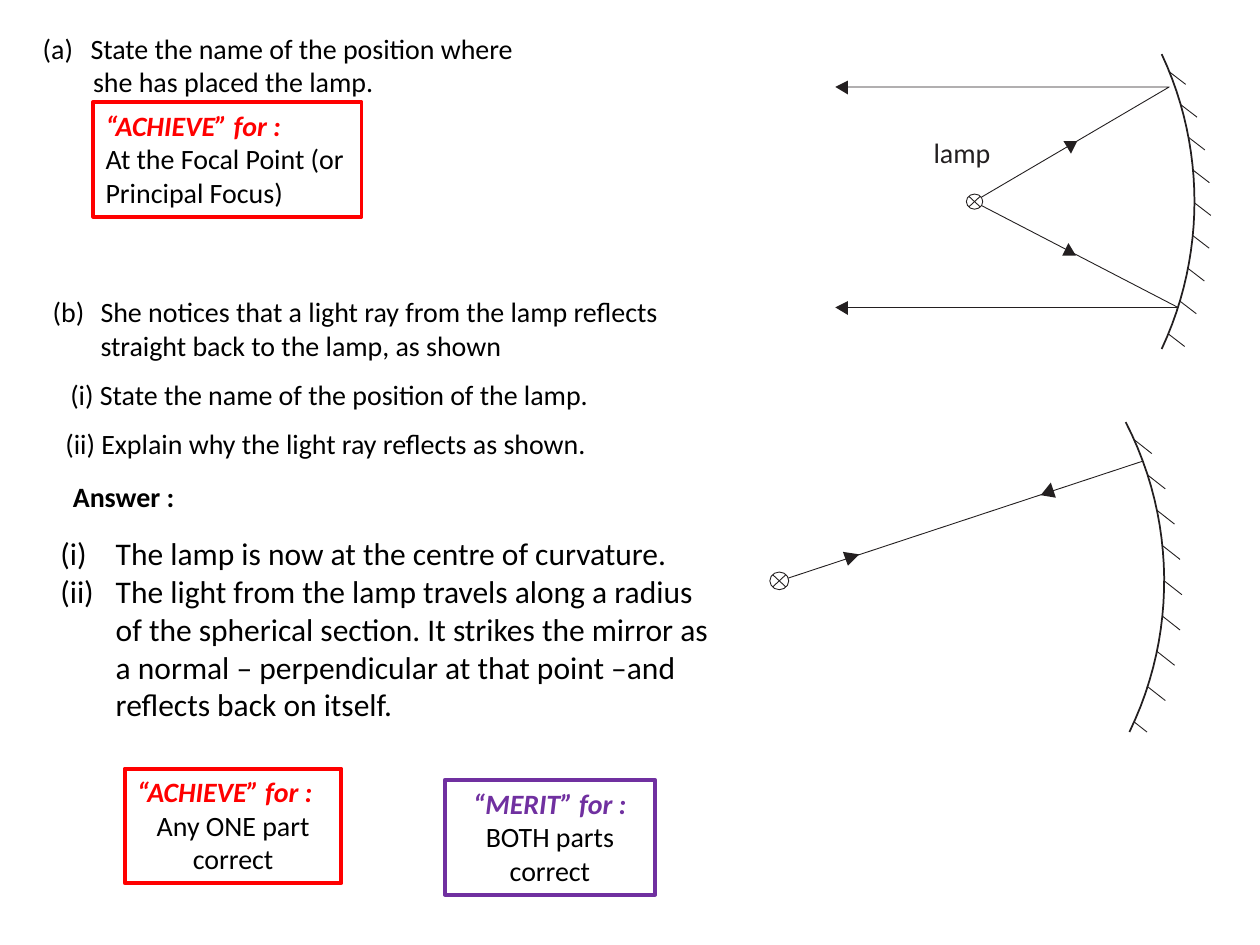
import pptx
import pptx.dml.color
import pptx.enum.shapes
import pptx.enum.text
import pptx.oxml
import pptx.oxml.ns
import pptx.util

Inches, Pt = pptx.util.Inches, pptx.util.Pt
SHAPE = pptx.enum.shapes.MSO_SHAPE
ALIGN = pptx.enum.text.PP_ALIGN
COLORS = {"ink": "231F20", "black": "000000", "white": "FFFFFF",
          "red": "FF0000", "purple": "7030A0"}

# Paragraph: text, then optional indent (left, first), number (style, start)
TEXTS = [
    {"at": (0.24, 0.2, 4.21, 0.64), "paras": [
        {"text": "State the name of the position where",
         "indent": (0.38, -0.38), "number": ("alphaLcParenBoth", 1)},
        {"text": "she has placed the lamp.", "indent": (0.4, 0)}]},
    {"at": (0.32, 2.29, 5.53, 0.64), "paras": [
        {"text": "She notices that a light ray from the lamp reflects "
                 "straight back to the lamp, as shown",
         "indent": (0.38, -0.38), "number": ("alphaLcParenBoth", 2)}]},
    {"at": (0.46, 2.95, 5, 0.37), "paras": [
        {"text": "(i) State the name of the position of the lamp."}]},
    {"at": (-0.08, 3.34, 5.11, 0.37), "paras": [
        {"text": "(ii) Explain why the light ray reflects as shown.",
         "indent": (0.5, 0)}]},
    {"at": (0.48, 3.76, 1.02, 0.37), "wrap": False, "paras": [
        {"text": "Answer :", "bold": True}]},
    {"at": (0.38, 4.19, 5.42, 1.62), "size": 18, "paras": [
        {"text": text, "indent": (0.44, -0.44),
         "number": ("romanLcParenBoth", 1)}
        for text in (
            "The lamp is now at the centre of curvature.",
            "The light from the lamp travels along a radius of the spherical "
            "section. It strikes the mirror as a normal – perpendicular at "
            "that point –and reflects back on itself.")]},
]

# Place, colour, fill, head, head alignment, body, body alignment
GRADES = [
    ((0.74, 0.81, 2.13, 0.91), "red", "white", "“ACHIEVE” for :", ALIGN.LEFT,
     "At the Focal Point (or Principal Focus)", ALIGN.LEFT),
    ((0.99, 6.1, 1.72, 0.91), "red", "white", "“ACHIEVE” for :", ALIGN.LEFT,
     "Any ONE part correct", ALIGN.CENTER),
    ((3.53, 6.19, 1.67, 0.91), "purple", None, "“MERIT” for :", ALIGN.CENTER,
     "BOTH parts correct", ALIGN.CENTER),
]

# Mirror: vertex, radius, top and bottom; ticks: first y, step, size
DIAGRAMS = [
    {"ray": [(6.71, 0.69), (9.28, 0.69), (7.73, 1.6), (9.35, 2.44), (6.71, 2.44)],
     "heads": [[(6.73, 0.64), (6.63, 0.69), (6.73, 0.75)],
               [(6.73, 2.39), (6.63, 2.44), (6.73, 2.5)],
               [(8.44, 1.12), (8.5, 1.22), (8.55, 1.12)],
               [(8.48, 1.93), (8.43, 2.03), (8.54, 2.03)]],
     "lamp": (7.67, 1.54, 0.13, 0.12),
     "mirror": (9.48, 1.6, 2.76, 0.43, 2.77),
     "ticks": (0.57, 0.26, 0.13, 0.1)},
    {"ray": [(9.07, 3.66), (6.19, 4.61)],
     "heads": [[(6.69, 4.38), (6.73, 4.49), (6.82, 4.4)],
               [(8.34, 3.83), (8.26, 3.93), (8.38, 3.95)]],
     "lamp": (6.11, 4.54, 0.15, 0.14),
     "mirror": (9.24, 4.61, 2.75, 3.35, 5.81),
     "ticks": (3.49, 0.28, 0.14, 0.11)},
]
TICKS = 9
ARC_STEPS = 24


def color(name):
    return pptx.dml.color.RGBColor.from_string(COLORS[name])


def paint(shape, fill=None, line=None, width=0.5):
    shape.shadow.inherit = False
    if fill:
        shape.fill.solid()
        shape.fill.fore_color.rgb = color(fill)
    else:
        shape.fill.background()
    if line:
        shape.line.color.rgb = color(line)
        shape.line.width = Pt(width)
    else:
        shape.line.fill.background()


def style(para, tint="black", size=16, bold=False, italic=False):
    for run in para.runs:
        font = run.font
        font.name, font.size = "Calibri", Pt(size)
        font.bold, font.italic = bold, italic
        font.color.rgb = color(tint)


def indent(para, left, first, number=None):
    props = para._p.get_or_add_pPr()
    props.set("marL", str(Inches(left)))
    props.set("indent", str(Inches(first)))
    if number:
        mark = pptx.oxml.parse_xml(
            f'<a:buAutoNum {pptx.oxml.ns.nsdecls("a")} type="{number[0]}"/>')
        if number[1] > 1:
            mark.set("startAt", str(number[1]))
        props.append(mark)


def fit(frame, wrap=True):
    frame.word_wrap = wrap
    frame.auto_size = pptx.enum.text.MSO_AUTO_SIZE.SHAPE_TO_FIT_TEXT
    frame.vertical_anchor = pptx.enum.text.MSO_ANCHOR.TOP


def add_text(shapes, item):
    frame = shapes.add_textbox(*map(Inches, item["at"])).text_frame
    fit(frame, item.get("wrap", True))
    frame.text = "\n".join(part["text"] for part in item["paras"])
    for para, part in zip(frame.paragraphs, item["paras"]):
        if "indent" in part:
            indent(para, *part["indent"], part.get("number"))
        style(para, size=item.get("size", 16), bold=part.get("bold", False))


def add_grade(shapes, at, tint, fill, head, head_align, body, body_align):
    box = shapes.add_shape(SHAPE.RECTANGLE, *map(Inches, at))
    paint(box, fill, tint, 2.25)
    fit(box.text_frame)
    box.text_frame.text = f"{head}\n{body}"
    first, last = box.text_frame.paragraphs
    first.alignment, last.alignment = head_align, body_align
    style(first, tint, bold=True, italic=True)
    style(last)


def add_path(shapes, points, close=False):
    points = [tuple(map(Inches, point)) for point in points]
    pen = shapes.build_freeform(*points[0])
    pen.add_line_segments(points[1:], close=close)
    return pen.convert_to_shape()


def add_line(shapes, start, end):
    line = shapes.add_connector(pptx.enum.shapes.MSO_CONNECTOR.STRAIGHT,
                                *map(Inches, start + end))
    line.line.color.rgb = color("ink")
    line.line.width = Pt(0.5)
    line._element.spPr.append(pptx.oxml.parse_xml(
        f'<a:effectLst {pptx.oxml.ns.nsdecls("a")}/>'))


def add_diagram(shapes, item):
    left, mid, radius, top, bottom = item["mirror"]

    def arc(y):
        return left - radius + (radius ** 2 - (y - mid) ** 2) ** 0.5, y

    if len(item["ray"]) == 2:
        add_line(shapes, *item["ray"])
    else:
        paint(add_path(shapes, item["ray"]), line="ink")
    for head in item["heads"]:
        paint(add_path(shapes, head, close=True), fill="ink")
    lamp = shapes.add_shape(SHAPE.FLOWCHART_SUMMING_JUNCTION,
                            *map(Inches, item["lamp"]))
    paint(lamp, "white", "ink")

    first, step, wide, high = item["ticks"]
    for i in range(TICKS):
        x, y = arc(first + i * step)
        size = min(1, (bottom - y) / high)
        add_line(shapes, (x, y), (x + wide * size, y + high * size))
    gap = (bottom - top) / ARC_STEPS
    curve = [arc(top + i * gap) for i in range(ARC_STEPS + 1)]
    paint(add_path(shapes, curve), line="ink", width=1)


def main():
    deck = pptx.Presentation()
    deck.slide_width, deck.slide_height = Inches(10), Inches(7.5)
    shapes = deck.slides.add_slide(deck.slide_layouts[6]).shapes
    for item in DIAGRAMS:
        add_diagram(shapes.add_group_shape().shapes, item)
    label = shapes.add_textbox(*map(Inches, (7.41, 1.08, 0.46, 0.23))).text_frame
    label.margin_left = label.margin_right = 0
    label.margin_top = label.margin_bottom = 0
    label.text = "lamp"
    style(label.paragraphs[0], "ink")
    for item in TEXTS:
        add_text(shapes, item)
    for grade in GRADES:
        add_grade(shapes, *grade)
    deck.save("out.pptx")


if __name__ == "__main__":
    main()
